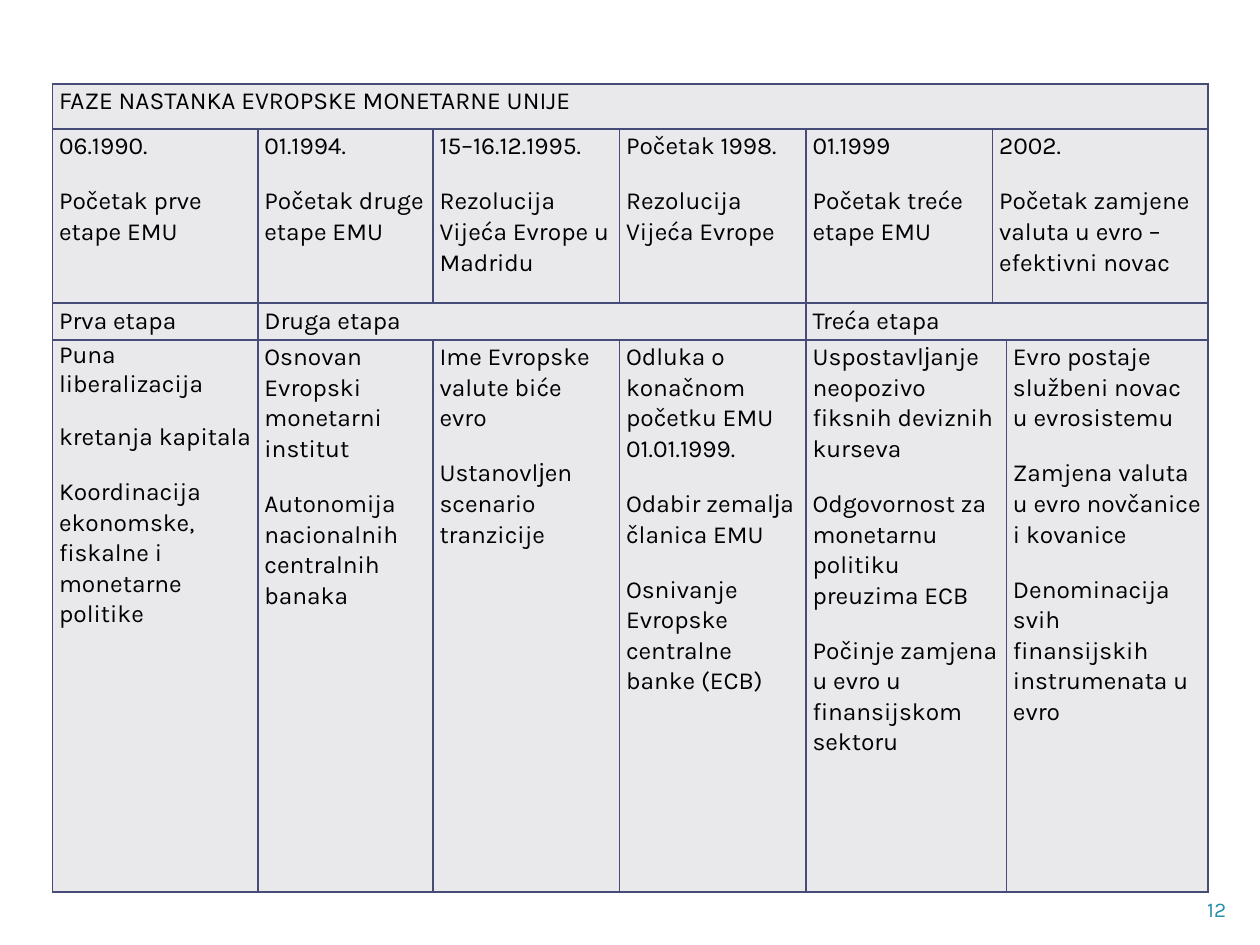
from dataclasses import dataclass

from lxml.etree import SubElement
from pptx import Presentation
from pptx.dml.color import RGBColor
from pptx.enum.text import PP_ALIGN as Align
from pptx.oxml.ns import qn
from pptx.util import Cm, Pt

COLORS = {"text": "000000", "fill": "E9E9EC", "border": "474B78", "number": "288FA9"}
FONT = "Karla"
COL_WIDTHS = [4.14, 3.53, 3.76, 3.76, 3.76, 0.28, 4.06]
ROW_HEIGHTS = [0.91, 3.51, 0.74, 11.13]
MARGINS = {"margin_left": Cm(0.13), "margin_right": Cm(0.13),
           "margin_top": Cm(0.03), "margin_bottom": Cm(0)}
SPACING = {"space_before": Pt(6), "space_after": Pt(8)}


@dataclass
class Entry:
    paragraphs: list[str]
    span: int = 1
    tight: int = 0  # leading paragraphs with single line spacing


ROWS = [
    [Entry(["FAZE NASTANKA EVROPSKE MONETARNE UNIJE"], span=7)],
    [
        Entry(["06.1990.", "Početak prve etape EMU"]),
        Entry(["01.1994.", "Početak druge etape EMU"]),
        Entry(["15–16.12.1995.", "Rezolucija Vijeća Evrope u Madridu"]),
        Entry(["Početak 1998.", "Rezolucija Vijeća Evrope"]),
        Entry(["01.1999", "Početak treće etape EMU"]),
        Entry(["2002.", "Početak zamjene valuta u evro – efektivni novac"], span=2),
    ],
    [
        Entry(["Prva etapa"]),
        Entry(["Druga etapa"], span=3),
        Entry(["Treća etapa"], span=3),
    ],
    [
        Entry(["Puna liberalizacija", "kretanja kapitala",
               "Koordinacija ekonomske, fiskalne i monetarne politike"], tight=2),
        Entry(["Osnovan Evropski monetarni institut",
               "Autonomija nacionalnih centralnih banaka"]),
        Entry(["Ime Evropske valute biće evro",
               "Ustanovlјen scenario tranzicije"]),
        Entry(["Odluka o konačnom početku EMU 01.01.1999.",
               "Odabir zemalјa članica EMU",
               "Osnivanje Evropske centralne banke (ECB)"]),
        Entry(["Uspostavlјanje neopozivo fiksnih deviznih kurseva",
               "Odgovornost za monetarnu politiku preuzima ECB",
               "Počinje zamjena u evro u finansijskom sektoru"], span=2),
        Entry(["Evro postaje službeni novac u evrosistemu",
               "Zamjena valuta u evro novčanice i kovanice",
               "Denominacija svih finansijskih instrumenata u evro"]),
    ],
]


def set_attrs(obj, values: dict) -> None:
    for name, value in values.items():
        setattr(obj, name, value)


def add_run(p, text: str, size: int, color: str) -> None:
    r = p.add_run()
    r.text = text
    set_attrs(r.font, {"name": FONT, "size": Pt(size)})
    r.font.color.rgb = RGBColor.from_string(COLORS[color])


def style_cell(cell) -> None:
    """Set margins, borders and fill; borders must precede the fill in the XML."""
    set_attrs(cell, MARGINS)
    tc_pr = cell._tc.get_or_add_tcPr()
    for side in ("lnL", "lnR", "lnT", "lnB"):
        ln = SubElement(tc_pr, qn(f"a:{side}"), w=str(Pt(1)))
        fill = SubElement(ln, qn("a:solidFill"))
        SubElement(fill, qn("a:srgbClr"), val=COLORS["border"])
    cell.fill.solid()
    cell.fill.fore_color.rgb = RGBColor.from_string(COLORS["fill"])


def write_entry(cell, entry: Entry) -> None:
    tf = cell.text_frame
    for i, text in enumerate(entry.paragraphs):
        p = tf.add_paragraph() if i else tf.paragraphs[0]
        set_attrs(p, SPACING)
        p.line_spacing = 1.0 if i < entry.tight else 1.07
        add_run(p, text, 14, "text")


def add_phase_table(s) -> None:
    table = s.shapes.add_table(
        len(ROW_HEIGHTS), len(COL_WIDTHS), Cm(1.06), Cm(1.69),
        Cm(sum(COL_WIDTHS)), Cm(sum(ROW_HEIGHTS))).table
    for column, width in zip(table.columns, COL_WIDTHS):
        column.width = Cm(width)
    for row, height in zip(table.rows, ROW_HEIGHTS):
        row.height = Cm(height)
    for cell in table.iter_cells():
        style_cell(cell)
    for i, entries in enumerate(ROWS):
        col = 0
        for entry in entries:
            cell = table.cell(i, col)
            if entry.span > 1:
                cell.merge(table.cell(i, col + entry.span - 1))
            write_entry(cell, entry)
            col += entry.span


def add_page_number(s, number: str) -> None:
    tf = s.shapes.add_textbox(Cm(22.86), Cm(17.98), Cm(2.11), Cm(0.69)).text_frame
    set_attrs(tf, {"word_wrap": True, "margin_left": 0, "margin_right": Cm(0.25),
                   "margin_top": Cm(0.1), "margin_bottom": Cm(0.1)})
    p = tf.paragraphs[0]
    p.alignment = Align.RIGHT
    add_run(p, number, 12, "number")


def main() -> None:
    prs = Presentation()
    set_attrs(prs, {"slide_width": Cm(25.4), "slide_height": Cm(19.05)})
    s = prs.slides.add_slide(prs.slide_layouts[6])
    add_page_number(s, "12")
    add_phase_table(s)
    prs.save("out.pptx")


if __name__ == "__main__":
    main()
